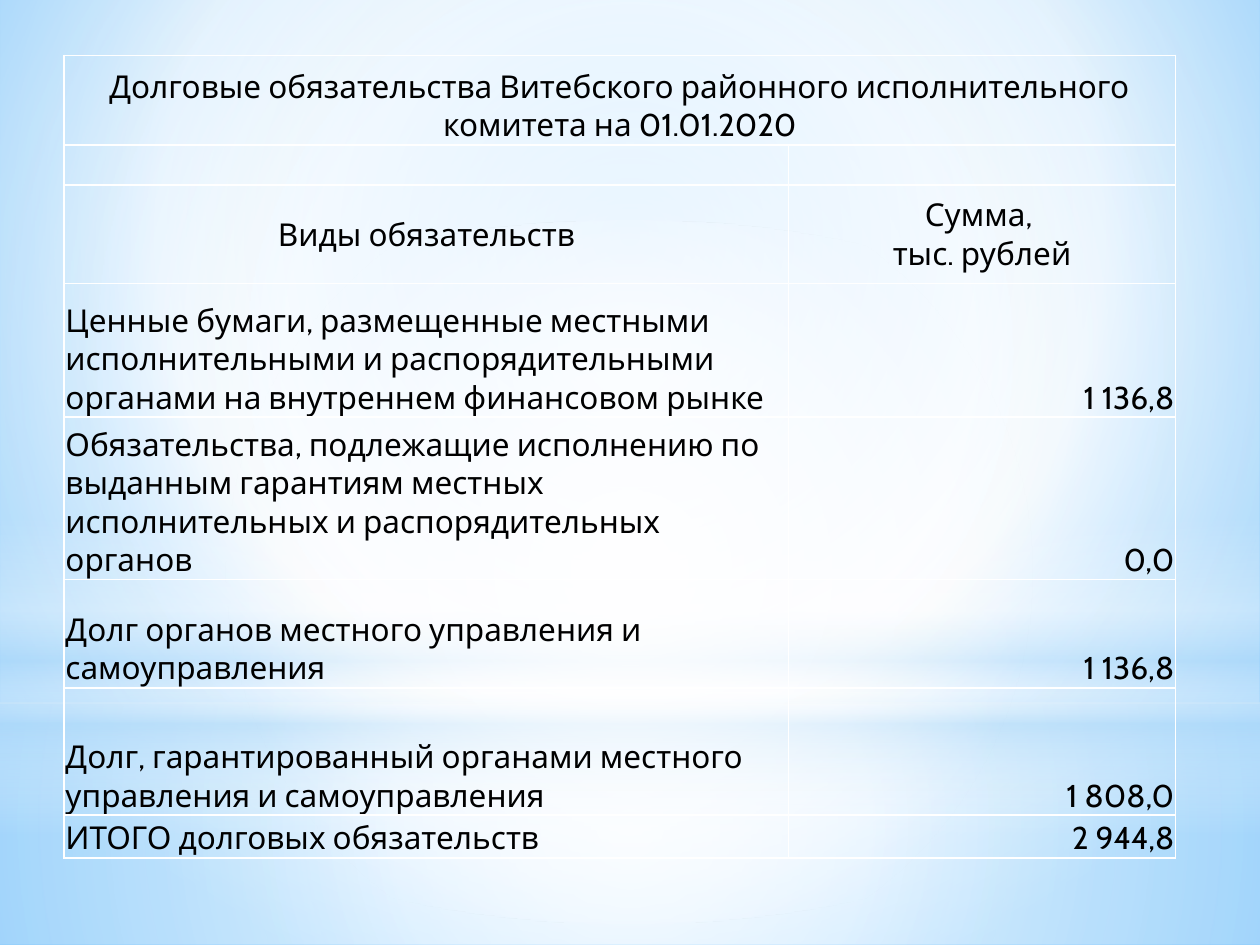
import dataclasses
import typing

import lxml.etree
import pptx
import pptx.dml.color
import pptx.enum.shapes
import pptx.enum.text
import pptx.oxml.ns
import pptx.util

WIDTH, HEIGHT = 10, 7.5
WHITE, PALE = "FFFFFF", "B4DCFA"
KINDS = pptx.enum.shapes.MSO_SHAPE
ALIGN = pptx.enum.text.PP_ALIGN
ANCHOR = pptx.enum.text.MSO_ANCHOR
CENTRE = (50, 50, 50, 50)
COLUMNS = (5.75, 3.07)
ROWS = (0.71, 0.32, 0.78, 1.06, 1.29, 0.86, 1.01, 0.34)
MARGINS = {"margin_left": 0.01, "margin_right": 0.01, "margin_top": 0.01, "margin_bottom": 0}
FONT = {"name": "Cabin", "size": pptx.util.Pt(18), "bold": False}


class Stop(typing.NamedTuple):
    place: int
    colour: str
    opacity: int = 100


@dataclasses.dataclass
class Glow:
    kind: pptx.enum.shapes.MSO_SHAPE
    top: float
    height: float
    stops: list[Stop]
    focus: typing.Optional[tuple[int, int, int, int]] = CENTRE


class Entry(typing.NamedTuple):
    text: str
    align: ALIGN
    anchor: ANCHOR = ANCHOR.BOTTOM


GLOWS = [
    Glow(KINDS.RECTANGLE, 0.744, 0.256,
         [Stop(0, WHITE, 91), Stop(37, WHITE, 76), Stop(100, PALE, 79)]),
    Glow(KINDS.RECTANGLE, 0, 0.744,
         [Stop(0, WHITE, 89), Stop(48, WHITE, 62), Stop(100, PALE, 79)]),
    Glow(KINDS.RECTANGLE, 0.549, 0.333,
         [Stop(0, WHITE, 0), Stop(29, WHITE, 30), Stop(45, PALE, 40),
          Stop(55, WHITE, 26), Stop(65, PALE, 60), Stop(100, WHITE, 0)], None),
    Glow(KINDS.OVAL, 0.233, 0.744, [Stop(0, WHITE), Stop(56, WHITE, 0)]),
]

DEBTS = [
    ("Ценные бумаги, размещенные местными исполнительными и распорядительными "
     "органами на внутреннем финансовом рынке", "1 136,8"),
    ("Обязательства, подлежащие исполнению по выданным гарантиям местных "
     "исполнительных и распорядительных органов", "0,0"),
    ("Долг органов местного управления и самоуправления", "1 136,8"),
    ("Долг, гарантированный органами местного управления и самоуправления", "1 808,0"),
    ("ИТОГО долговых обязательств", "2 944,8"),
]

ENTRIES = {
    (0, 0): Entry("Долговые обязательства Витебского районного исполнительного "
                  "комитета на 01.01.2020", ALIGN.CENTER),
    (2, 0): Entry("Виды обязательств", ALIGN.CENTER, ANCHOR.MIDDLE),
    (2, 1): Entry("Сумма, \nтыс. рублей", ALIGN.CENTER, ANCHOR.MIDDLE),
}
for debt_row, (debt, amount) in enumerate(DEBTS, 3):
    ENTRIES[debt_row, 0] = Entry(debt, ALIGN.LEFT)
    ENTRIES[debt_row, 1] = Entry(amount, ALIGN.RIGHT)


def rgb(colour: str) -> pptx.dml.color.RGBColor:
    return pptx.dml.color.RGBColor.from_string(colour)


def add(parent, tag: str, **attributes):
    child = lxml.etree.SubElement(parent, pptx.oxml.ns.qn(tag))
    for key, value in attributes.items():
        child.set(key, str(value))
    return child


def set_gradient(owner, fill, stops: list[Stop], focus) -> None:
    fill.gradient()
    gradient = next(owner.iter(pptx.oxml.ns.qn("a:gradFill")))
    for child in list(gradient):
        gradient.remove(child)
    stop_list = add(gradient, "a:gsLst")
    for stop in stops:
        mark = add(stop_list, "a:gs", pos=stop.place * 1000)
        colour = add(mark, "a:srgbClr", val=stop.colour)
        if stop.opacity < 100:
            add(colour, "a:alpha", val=stop.opacity * 1000)
    if focus:
        shade = add(gradient, "a:path", path="circle")
        add(shade, "a:fillToRect", **{side: share * 1000 for side, share in zip("ltrb", focus)})
    else:
        add(gradient, "a:lin", ang=90 * 60000, scaled=0)


def draw_glow(slide, glow: Glow) -> None:
    shape = slide.shapes.add_shape(
        glow.kind, 0, pptx.util.Inches(glow.top * HEIGHT),
        pptx.util.Inches(WIDTH), pptx.util.Inches(glow.height * HEIGHT))
    shape.shadow.inherit = False
    shape.line.fill.background()
    set_gradient(shape._element, shape.fill, glow.stops, glow.focus)


def set_borders(cell) -> None:
    properties = cell._tc.get_or_add_tcPr()
    for index, side in enumerate(("a:lnL", "a:lnR", "a:lnT", "a:lnB")):
        border = add(properties, side, w=pptx.util.Pt(1))
        add(add(border, "a:solidFill"), "a:srgbClr", val=WHITE)
        properties.insert(index, border)


def write_entry(cell, entry: Entry) -> None:
    cell.vertical_anchor = entry.anchor
    paragraph = cell.text_frame.paragraphs[0]
    paragraph.text = entry.text
    paragraph.alignment = entry.align
    for run in paragraph.runs:
        for key, value in FONT.items():
            setattr(run.font, key, value)
        run.font.color.rgb = rgb("000000")


def draw_table(slide) -> None:
    left, top, width, height = map(pptx.util.Inches, (0.51, 0.44, sum(COLUMNS), sum(ROWS)))
    debts = slide.shapes.add_table(len(ROWS), len(COLUMNS), left, top, width, height).table
    debts.first_row = debts.horz_banding = False
    for column, share in zip(debts.columns, COLUMNS):
        column.width = pptx.util.Inches(share)
    for row, share in zip(debts.rows, ROWS):
        row.height = pptx.util.Inches(share)
    debts.cell(0, 0).merge(debts.cell(0, 1))
    for cell in debts.iter_cells():
        for key, value in MARGINS.items():
            setattr(cell, key, pptx.util.Inches(value))
        cell.fill.background()
        set_borders(cell)
    for position, entry in ENTRIES.items():
        write_entry(debts.cell(*position), entry)


def main() -> None:
    deck = pptx.Presentation()
    deck.slide_width, deck.slide_height = pptx.util.Inches(WIDTH), pptx.util.Inches(HEIGHT)
    slide = deck.slides.add_slide(deck.slide_layouts[6])
    set_gradient(slide._element, slide.background.fill,
                 [Stop(0, "9ED5FF"), Stop(60, WHITE), Stop(100, "5BB9FF")], (20, 10, 20, 60))
    for glow in GLOWS:
        draw_glow(slide, glow)
    draw_table(slide)
    deck.save("out.pptx")


if __name__ == "__main__":
    main()
